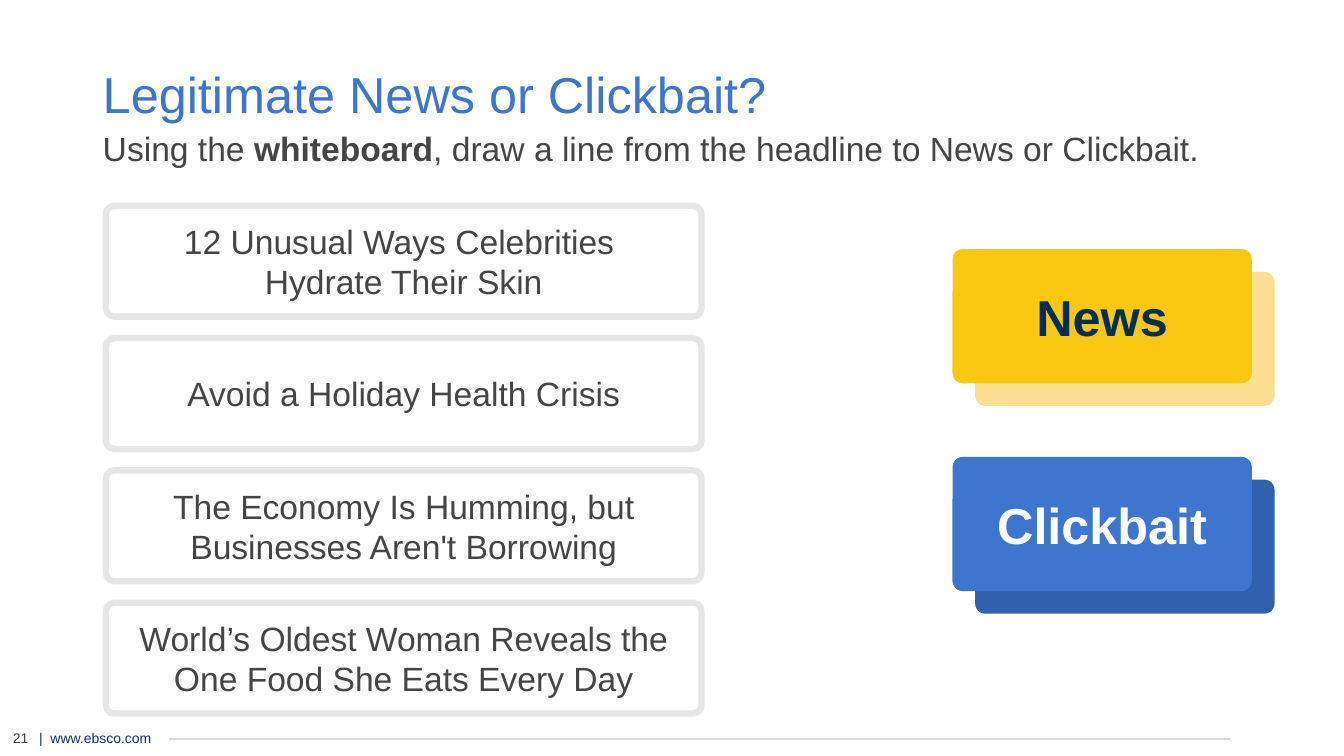
import pptx
import pptx.util
import pptx.dml.color
import pptx.enum.shapes
import pptx.enum.text
import pptx.oxml.ns
from dataclasses import dataclass
from lxml import etree

Pt = pptx.util.Pt
ALIGN = pptx.enum.text.PP_ALIGN
ANCHOR = pptx.enum.text.MSO_ANCHOR

TITLE = "Legitimate News or Clickbait?"
INSTRUCTION = [
    ("Using the ", False),
    ("whiteboard", True),
    (", draw a line from the headline to News or Clickbait.", False),
]
HEADLINES = [
    ["12 Unusual Ways Celebrities ", "Hydrate Their Skin"],
    ["Avoid a Holiday Health Crisis"],
    ["The Economy Is Humming, but Businesses Aren't Borrowing"],
    ["World’s Oldest Woman Reveals the One Food She Eats Every Day"],
]
PAGE_NUMBER = "21"
WEB_ADDRESS = "|  www.ebsco.com"


@dataclass(frozen=True)
class Theme:
    font: str = "Arial"
    blue: str = "3E75CF"
    dark_blue: str = "3060AE"
    yellow: str = "FAC812"
    pale_yellow: str = "FCDF92"
    navy: str = "002F56"
    footer_navy: str = "0E316B"
    white: str = "FFFFFF"
    text: str = "454545"
    border: str = "E7E6E6"
    rule: str = "D9D9D9"
    large: int = 36
    medium: int = 24
    small: int = 10


THEME = Theme()
# label, label colour, front fill, back fill
CATEGORIES = [
    ("News", THEME.navy, THEME.yellow, THEME.pale_yellow),
    ("Clickbait", THEME.white, THEME.blue, THEME.dark_blue),
]

CARD_LEFT, CARD_TOP, CARD_WIDTH, CARD_HEIGHT, CARD_STEP = 75.6, 147, 425.5, 79.2, 94.5
TILE_LEFT, TILE_TOP, TILE_WIDTH, TILE_HEIGHT, TILE_STEP = 680.4, 178, 213.8, 95.8, 148.4
TILE_OFFSET = 16.2
CORNER = 0.076


def rgb(value):
    return pptx.dml.color.RGBColor.from_string(value)


def add_span(para, text, size, color, bold=False):
    span = para.add_run()
    span.text = text
    span.font.name = THEME.font
    span.font.size = Pt(size)
    span.font.bold = bold
    span.font.color.rgb = rgb(color)


def add_break(para, size):
    """Add a line break that keeps the type size of its line."""
    para.add_line_break()
    line_break = para._p.findall(pptx.oxml.ns.qn("a:br"))[-1]
    etree.SubElement(line_break, pptx.oxml.ns.qn("a:rPr"), sz=str(size * 100))


def add_rounded_box(page, left, top, width, height, fill=None, border=None):
    box = page.shapes.add_shape(
        pptx.enum.shapes.MSO_SHAPE.ROUNDED_RECTANGLE,
        Pt(left), Pt(top), Pt(width), Pt(height))
    box.adjustments[0] = CORNER
    box.shadow.inherit = False
    if fill:
        box.fill.solid()
        box.fill.fore_color.rgb = rgb(fill)
    else:
        box.fill.background()
    if border:
        box.line.color.rgb = rgb(border)
        box.line.width = Pt(4.5)
    else:
        box.line.fill.background()
    return box


def write_centred(box, lines, size, color, bold=False):
    frame = box.text_frame
    frame.word_wrap = True
    frame.vertical_anchor = ANCHOR.MIDDLE
    para = frame.paragraphs[0]
    para.alignment = ALIGN.CENTER
    for index, line in enumerate(lines):
        if index:
            add_break(para, size)
        add_span(para, line, size, color, bold)


def add_footer(page):
    address = page.shapes.add_textbox(Pt(20.9), Pt(517.7), Pt(139.7), Pt(19.4))
    address.text_frame.word_wrap = True
    add_span(address.text_frame.paragraphs[0], WEB_ADDRESS, THEME.small, THEME.footer_navy)

    number = page.shapes.add_textbox(Pt(-2.9), Pt(517.7), Pt(35.3), Pt(19.4))
    write_centred(number, [PAGE_NUMBER], THEME.small, THEME.text)

    rule = page.shapes.add_connector(
        pptx.enum.shapes.MSO_CONNECTOR.STRAIGHT,
        Pt(121), Pt(527.8), Pt(878.4), Pt(527.8))
    rule.line.color.rgb = rgb(THEME.rule)
    rule.line.width = Pt(1)
    etree.SubElement(rule._element.spPr, pptx.oxml.ns.qn("a:effectLst"))


def add_title(page):
    title = page.shapes.title
    title.left, title.top, title.width, title.height = Pt(66.2), Pt(37.4), Pt(856.1), Pt(80.6)
    frame = title.text_frame
    frame.word_wrap = True
    frame.auto_size = pptx.enum.text.MSO_AUTO_SIZE.NONE
    frame.vertical_anchor = ANCHOR.TOP
    para = frame.paragraphs[0]
    para.alignment = ALIGN.LEFT
    para.line_spacing = 1.1
    add_span(para, TITLE, THEME.large, THEME.blue)
    add_break(para, THEME.large)
    for text, bold in INSTRUCTION:
        add_span(para, text, THEME.medium, THEME.text, bold)


def add_categories(page):
    for index, (label, color, front_fill, back_fill) in enumerate(CATEGORIES):
        top = TILE_TOP + index * TILE_STEP
        add_rounded_box(page, TILE_LEFT + TILE_OFFSET, top + TILE_OFFSET,
                        TILE_WIDTH, TILE_HEIGHT, fill=back_fill)
        front = add_rounded_box(page, TILE_LEFT, top, TILE_WIDTH, TILE_HEIGHT, fill=front_fill)
        write_centred(front, [label], THEME.large, color, bold=True)


def add_headlines(page):
    for index, lines in enumerate(HEADLINES):
        card = add_rounded_box(page, CARD_LEFT, CARD_TOP + index * CARD_STEP,
                               CARD_WIDTH, CARD_HEIGHT, border=THEME.border)
        write_centred(card, lines, THEME.medium, THEME.text)


def main():
    deck = pptx.Presentation()
    deck.slide_width, deck.slide_height = Pt(960), Pt(540)
    page = deck.slides.add_slide(deck.slide_layouts.get_by_name("Title Only"))
    add_footer(page)
    add_title(page)
    add_categories(page)
    add_headlines(page)
    deck.save("out.pptx")


if __name__ == "__main__":
    main()
